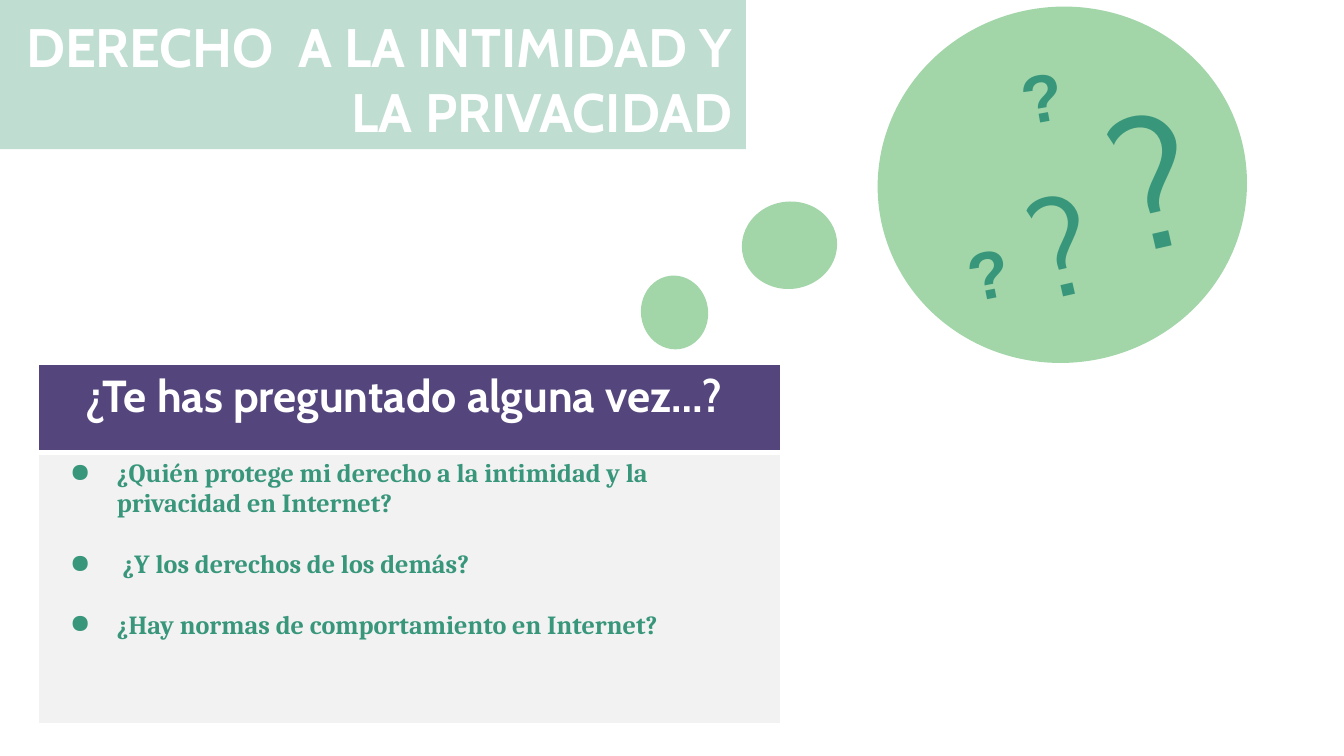
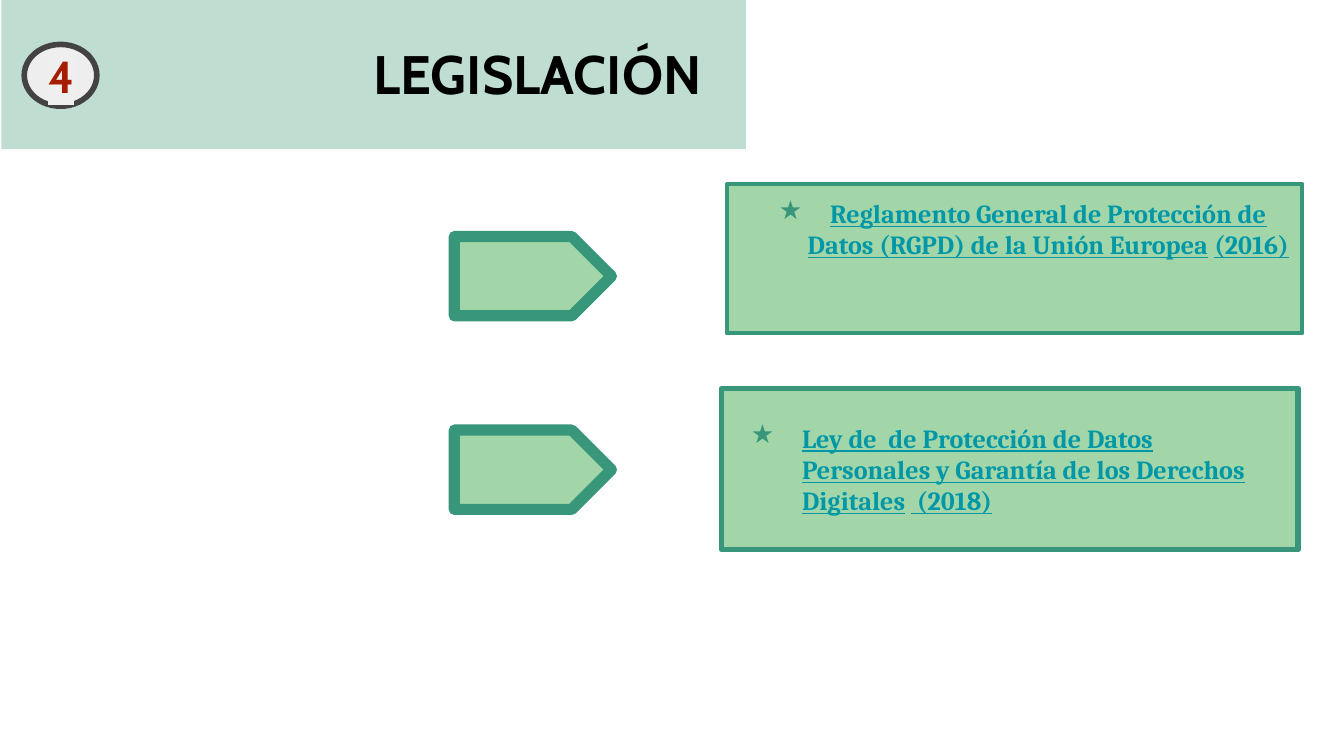
import pptx
import pptx.util
import pptx.dml.color
import pptx.enum.shapes
import pptx.enum.text
import pptx.oxml
import pptx.oxml.ns
from lxml import etree
from dataclasses import dataclass

Pt = pptx.util.Pt
SHAPE = pptx.enum.shapes.MSO_SHAPE
ALIGN = pptx.enum.text.PP_ALIGN
ANCHOR = pptx.enum.text.MSO_ANCHOR
qn = pptx.oxml.ns.qn


@dataclass(frozen=True)
class Theme:
    # Colours
    band: str = "BFDDD1"
    green: str = "A2D6A8"
    teal: str = "38967B"
    purple: str = "54457D"
    pale: str = "F2F2F2"
    white: str = "FFFFFF"
    black: str = "000000"
    law: str = "0097A7"
    badge: str = "EEEEEE"
    badge_line: str = "434343"
    badge_text: str = "A61C00"
    highlight: str = "EFEFEF"
    # Fonts and sizes
    display: str = "Cabin"
    body: str = "Cambria"
    plain: str = "Arial"
    title_size: float = 29
    heading_size: float = 24
    body_size: float = 14
    inset: float = 7.2


THEME = Theme()


def rgb(value):
    return pptx.dml.color.RGBColor.from_string(value)


def add_xml(parent, tag, **attributes):
    return etree.SubElement(parent, qn(tag), attributes)


def prepare(frame, anchor=ANCHOR.TOP):
    frame.word_wrap = True
    frame.vertical_anchor = anchor
    frame.margin_left = frame.margin_right = Pt(THEME.inset)
    frame.margin_top = frame.margin_bottom = Pt(THEME.inset)


def write(para, text, size, font, colour, bold=True, align=ALIGN.LEFT):
    para.alignment = align
    para.font.size = Pt(size)
    para.font.name = font
    para.font.bold = bold
    para.font.color.rgb = rgb(colour)
    if text:
        para.add_run().text = text


def add_bullet(para, mark, hanging):
    """Call before the paragraph's font is set, to keep the XML order."""
    properties = para._p.get_or_add_pPr()
    properties.set("marL", str(Pt(36)))
    properties.set("indent", str(-Pt(hanging)))
    add_xml(add_xml(properties, "a:buClr"), "a:srgbClr", val=THEME.teal)
    add_xml(properties, "a:buChar", char=mark)


def add_figure(page, kind, box, fill, line=None, width=0, rotation=0):
    shape = page.shapes.add_shape(kind, *map(Pt, box))
    shape.shadow.inherit = False
    shape.rotation = rotation
    shape.fill.solid()
    shape.fill.fore_color.rgb = rgb(fill)
    if line:
        shape.line.color.rgb = rgb(line)
        shape.line.width = Pt(width)
        add_xml(shape.line._get_or_add_ln(), "a:round")
    else:
        shape.line.fill.background()
    return shape


def add_label(page, box, text, size, font, colour, bold=True, align=ALIGN.LEFT, rotation=0):
    label = page.shapes.add_textbox(*map(Pt, box))
    label.rotation = rotation
    prepare(label.text_frame)
    write(label.text_frame.paragraphs[0], text, size, font, colour, bold, align)


# Title band shared by both slides
def add_title(page, band, text_box, text, colour):
    add_figure(page, SHAPE.RECTANGLE, band, THEME.band)
    add_label(page, text_box, text, THEME.title_size, THEME.display, colour, align=ALIGN.RIGHT)


# Table of questions
def add_questions(page, box, heading, questions):
    table = page.shapes.add_table(2, 1, *map(Pt, box)).table
    table.rows[0].height = Pt(48)
    table.rows[1].height = Pt(box[3] - 48)
    for row, fill in enumerate((THEME.purple, THEME.pale)):
        cell = table.cell(row, 0)
        prepare(cell.text_frame)
        properties = cell._tc.get_or_add_tcPr()
        for side in ("a:lnL", "a:lnR", "a:lnT", "a:lnB"):
            border = add_xml(properties, side, w=str(Pt(3)))
            add_xml(add_xml(border, "a:solidFill"), "a:srgbClr", val=THEME.white)
        cell.fill.solid()
        cell.fill.fore_color.rgb = rgb(fill)
    write(table.cell(0, 0).text_frame.paragraphs[0], heading, THEME.heading_size,
          THEME.display, THEME.white, align=ALIGN.CENTER)
    frame = table.cell(1, 0).text_frame
    for index, question in enumerate(questions):
        para = frame.add_paragraph() if index else frame.paragraphs[0]
        add_bullet(para, "●", 25.2)
        write(para, question, THEME.body_size, THEME.body, THEME.teal)
        if index:
            para.space_before = Pt(16.4)


# Thought bubble with its question marks, relative to the box's corner
def add_thought(page, box):
    left, top = box[:2]
    bubbles = ((126.7, 0, 198, 190.8), (54, 104.4, 51.1, 46.8), (0, 144, 36, 39.6))
    for x, y, width, height in bubbles:
        add_figure(page, SHAPE.OVAL, (left + x, top + y, width, height),
                   THEME.green, rotation=-7.8)
    marks = (
        (240.5, 28.8, 38.9, 85, 96, THEME.display, -12.9),
        (203.8, 74.2, 59, 120.2, 72, THEME.display, -12.9),
        (193, 18.7, 41, 40.3, 36, THEME.plain, -10.2),
        (155.5, 113.8, 56.9, 35.3, 36, THEME.plain, -11.3),
    )
    for x, y, width, height, size, font, rotation in marks:
        small = font == THEME.plain
        add_label(page, (left + x, top + y, width, height), "?", size, font, THEME.teal,
                  small, ALIGN.CENTER if small else ALIGN.LEFT, rotation)


# Round number badge
def add_badge(page, box, number):
    badge = add_figure(page, SHAPE.OVAL, box, THEME.badge, THEME.badge_line, 3)
    prepare(badge.text_frame, ANCHOR.MIDDLE)
    para = badge.text_frame.paragraphs[0]
    write(para, number, THEME.heading_size, THEME.display, THEME.badge_text, align=ALIGN.CENTER)
    highlight = add_xml(para.runs[0]._r.get_or_add_rPr(), "a:highlight")
    add_xml(highlight, "a:srgbClr", val=THEME.highlight)


# Framed law with a starred, underlined name
def add_law(page, box, name, year, line_width, align, anchor):
    card = add_figure(page, SHAPE.RECTANGLE, box, THEME.green, THEME.teal, line_width)
    prepare(card.text_frame, anchor)
    para = card.text_frame.paragraphs[0]
    add_bullet(para, "★", 27.4)
    write(para, "", THEME.body_size, THEME.body, THEME.law, align=align)
    for text in (name, " ", year):
        span = para.add_run()
        span.text = text
        span.font.underline = text != " "


def build_privacy(page):
    band = (0, 0, 399.6, 80)
    add_title(page, band, band, "DERECHO  A LA INTIMIDAD Y LA PRIVACIDAD", THEME.white)
    add_questions(page, (19.4, 194.4, 399.6, 194.2), "¿Te has preguntado alguna vez…? ", (
        "¿Quién protege mi derecho a la intimidad y la privacidad en Internet?",
        " ¿Y los derechos de los demás?",
        "¿Hay normas de comportamiento en Internet?",
    ))
    add_thought(page, (343.4, 3.6, 324.7, 190.8))


def build_legislation(page):
    add_title(page, (0.7, 0, 398.9, 80), (107.3, 14.4, 275.8, 50.4), "LEGISLACIÓN", THEME.black)
    add_badge(page, (13, 23.8, 38.9, 33.1), "4")
    for top in (126.7, 230.4):
        add_figure(page, SHAPE.PENTAGON, (243.4, top, 84.2, 42.5), THEME.green, THEME.teal, 6)
    add_law(page, (389.5, 98.6, 308.2, 80),
            "Reglamento General de Protección de Datos (RGPD) de la Unión Europea",
            "(2016)", 2.25, ALIGN.CENTER, ANCHOR.TOP)
    add_law(page, (386.6, 208.1, 308.9, 86.4),
            "Ley de  de Protección de Datos Personales y Garantía de los Derechos Digitales",
            " (2018)", 3, ALIGN.LEFT, ANCHOR.MIDDLE)


def main():
    deck = pptx.Presentation()
    deck.slide_width, deck.slide_height = Pt(720), Pt(405)
    for build in (build_privacy, build_legislation):
        build(deck.slides.add_slide(deck.slide_layouts[6]))
    deck.save("out.pptx")


if __name__ == "__main__":
    main()
